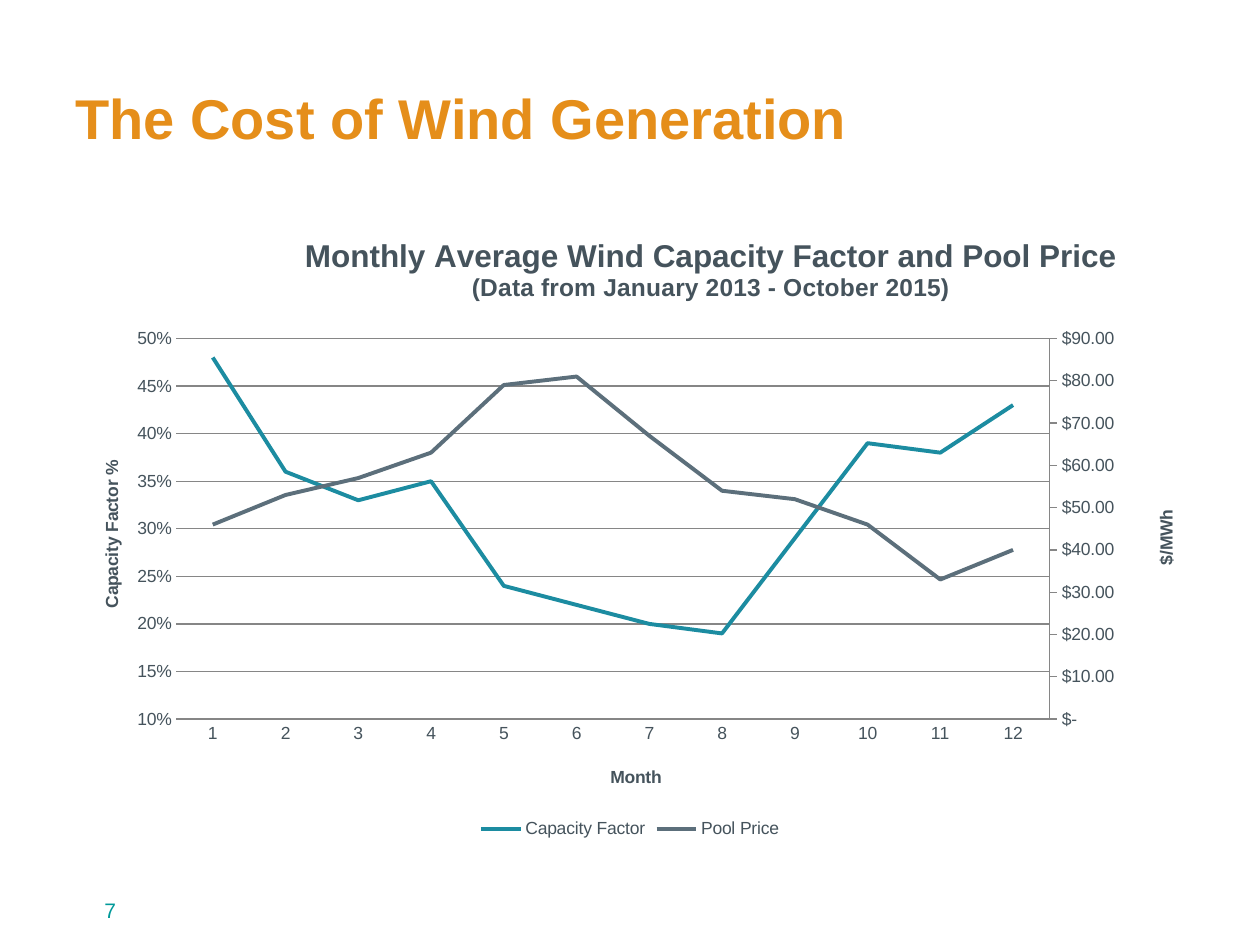
import copy

import pptx
import pptx.chart.axis
import pptx.chart.data
import pptx.dml.color
import pptx.enum.chart
import pptx.enum.text
import pptx.oxml
import pptx.oxml.ns
import pptx.util

PX = 914400 / 126
FONT = "Arial"
COLORS = {
    "title": "E58E1A",
    "number": "009999",
    "text": "45535C",
    "rule": "868686",
    "capacity": "1C8CA1",
    "price": "5C6F7B",
}
CAPACITY = [0.48, 0.36, 0.33, 0.35, 0.24, 0.22, 0.2, 0.19, 0.29, 0.39, 0.38, 0.43]
PRICE = [46, 53, 57, 63, 79, 81, 67, 54, 52, 46, 33, 40]
qn = pptx.oxml.ns.qn


def emu(*lengths):
    return [pptx.util.Emu(round(n * PX)) for n in lengths]


def rgb(name):
    return pptx.dml.color.RGBColor.from_string(COLORS[name])


def style_font(font, size, color, bold=False):
    font.name = FONT
    font.size = pptx.util.Pt(size)
    font.bold = bold
    font.color.rgb = rgb(color)


def style_line(line, color, width):
    line.color.rgb = rgb(color)
    line.width = pptx.util.Pt(width)


def add_text(slide, box, text, size, color, bold=False, anchor="TOP"):
    tf = slide.shapes.add_textbox(*emu(*box)).text_frame
    tf.word_wrap = True
    tf.vertical_anchor = getattr(pptx.enum.text.MSO_ANCHOR, anchor)
    tf.text = text
    style_font(tf.paragraphs[0].runs[0].font, size, color, bold)


def set_layout(parent, before, box, x, y, w=None, h=None):
    """Pin a chart part at px offsets inside the chart's box."""
    for old in parent.findall(qn("c:layout")):
        parent.remove(old)
    parts = [("xMode", "edge"), ("yMode", "edge"),
             ("x", round(x / box[2], 2)), ("y", round(y / box[3], 2))]
    if w:
        parts.insert(0, ("layoutTarget", "inner"))
        parts += [("w", round(w / box[2], 2)), ("h", round(h / box[3], 2))]
    inner = "".join(f'<c:{tag} val="{val}"/>' for tag, val in parts)
    layout = pptx.oxml.parse_xml(
        f'<c:layout {pptx.oxml.ns.nsdecls("c")}>'
        f"<c:manualLayout>{inner}</c:manualLayout></c:layout>")
    parent.find(qn(before)).addprevious(layout)


def set_title(title, lines, sizes, box, x, y, upright=False):
    tf = title.text_frame
    tf.text = "\n".join(lines)
    for p, size in zip(tf.paragraphs, sizes):
        style_font(p.runs[0].font, size, "text", True)
    if upright:
        body = title.element.find(".//" + qn("a:bodyPr"))
        body.set("rot", "-5400000")
        body.set("vert", "horz")
    set_layout(title.element, "c:overlay", box, x, y)


def move_to_second_axes(plot_area):
    """Put the last series on its own axes and return the right-hand axis."""
    left_plot = plot_area.find(qn("c:lineChart"))
    right_plot = copy.deepcopy(left_plot)
    left_plot.remove(left_plot.findall(qn("c:ser"))[-1])
    right_plot.remove(right_plot.findall(qn("c:ser"))[0])
    left_plot.addnext(right_plot)

    left = plot_area.find(qn("c:valAx"))
    cat, val = (copy.deepcopy(axis) for axis in (plot_area.find(qn("c:catAx")), left))
    ids = [axis.find(qn("c:axId")).get("val") for axis in (cat, val)]
    new_ids = dict(zip(ids, ("50010", "50020")))
    for part in (right_plot, cat, val):
        for tag in ("c:axId", "c:crossAx"):
            for ref in part.findall(qn(tag)):
                ref.set("val", new_ids[ref.get("val")])
    val.find(qn("c:axPos")).set("val", "r")
    val.find(qn("c:crosses")).set("val", "max")
    left.addnext(val)
    val.addnext(cat)
    pptx.chart.axis.CategoryAxis(cat).visible = False
    return pptx.chart.axis.ValueAxis(val)


def set_scale(axis, low, high, step, number_format):
    axis.minimum_scale, axis.maximum_scale, axis.major_unit = low, high, step
    axis.tick_labels.number_format = number_format
    axis.tick_labels.number_format_is_linked = False


def add_wind_chart(slide, box):
    enum = pptx.enum.chart
    data = pptx.chart.data.CategoryChartData()
    data.categories = [str(month) for month in range(1, 13)]
    data.add_series("Capacity Factor", CAPACITY, "0%")
    data.add_series("Pool Price", PRICE, "$#,##0.00")
    chart = slide.shapes.add_chart(enum.XL_CHART_TYPE.LINE, *emu(*box), data).chart
    style_font(chart.font, 10, "text")

    plot = chart.plots[0]
    plot.vary_by_categories = False
    for series, color in zip(plot.series, ("capacity", "price")):
        series.smooth = False
        series.marker.style = enum.XL_MARKER_STYLE.NONE
        style_line(series.format.line, color, 2.25)

    month, left = chart.category_axis, chart.value_axis
    for axis in (month, left):
        axis.major_tick_mark = axis.minor_tick_mark = enum.XL_TICK_MARK.NONE
    style_line(month.format.line, "rule", 0.75)
    left.has_major_gridlines = False
    plot_area = chart.element.find(".//" + qn("c:plotArea"))
    right = move_to_second_axes(plot_area)

    left.has_major_gridlines = True
    style_line(left.major_gridlines.format.line, "rule", 0.75)
    left.format.line.fill.background()
    set_scale(left, 0.1, 0.5, 0.05, "0%")
    right.major_tick_mark = enum.XL_TICK_MARK.OUTSIDE
    style_line(right.format.line, "rule", 0.75)
    set_scale(right, 0, 90, 10, '"$"#,##0.00;;"$-"')

    chart.has_title = True
    set_title(chart.chart_title,
              ["Monthly Average Wind Capacity Factor and Pool Price",
               "(Data from January 2013 - October 2015)"], [18, 14], box, 238, 15)
    set_title(month.axis_title, ["Month"], [10], box, 541, 540)
    set_title(left.axis_title, ["Capacity Factor %"], [10], box, 29, 238, True)
    set_title(right.axis_title, ["$/MWh"], [10], box, 1086, 285, True)
    set_layout(plot_area, "c:lineChart", box, 115, 117, 870, 380)

    chart.has_legend = True
    chart.legend.position = enum.XL_LEGEND_POSITION.BOTTOM
    chart.legend.include_in_layout = False
    style_font(chart.legend.font, 10, "text")


def main():
    prs = pptx.Presentation()
    prs.slide_width, prs.slide_height = emu(1260, 945)
    slide = prs.slides.add_slide(prs.slide_layouts[6])
    add_text(slide, (92, 891, 294, 50), "7", 12, "number")
    add_text(slide, (63, 38, 1134, 158), "The Cost of Wind Generation",
             32, "title", True, "MIDDLE")
    add_wind_chart(slide, (63, 220, 1134, 624))
    prs.save("out.pptx")


if __name__ == "__main__":
    main()
